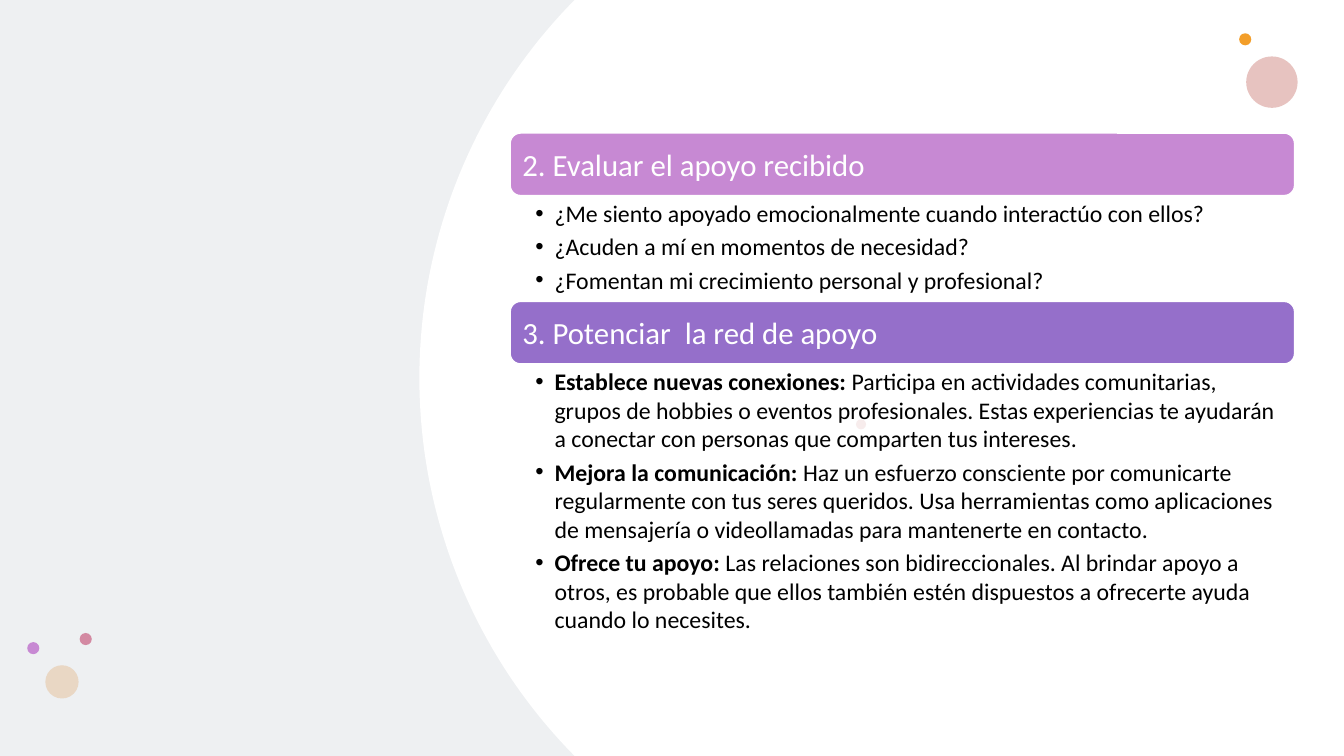
from math import asin, cos, sin

from lxml.etree import SubElement
from pptx import Presentation
from pptx.dml.color import RGBColor
from pptx.enum.shapes import MSO_SHAPE as Shape
from pptx.enum.text import MSO_ANCHOR as Anchor, MSO_AUTO_SIZE as AutoSize, PP_ALIGN as Align
from pptx.oxml.ns import qn
from pptx.util import Inches, Pt

WIDTH, HEIGHT = 13.33, 7.5
FONT = "Calibri"
CARD_LEFT, CARD_WIDTH, HEADING_HEIGHT = 5.06, 7.78, 0.62

# left, top, diameter, colour, opacity in percent
DOTS = [
    (12.36, 0.56, 0.51, "DFADA9", 72),
    (12.29, 0.33, 0.12, "F39E29", 100),
    (8.49, 4.16, 0.1, "E3BEBE", 28),
    (0.79, 6.28, 0.12, "D389A2", 100),
    (0.45, 6.6, 0.33, "E9D7C4", 100),
    (0.27, 6.37, 0.12, "C789D3", 100),
]

# top, list height, colour, heading, items as (bold lead, text)
SECTIONS = [
    (1.32, 1.05, "C789D3", "2. Evaluar el apoyo recibido", [
        ("", "¿Me siento apoyado emocionalmente cuando interactúo con ellos?"),
        ("", "¿Acuden a mí en momentos de necesidad?"),
        ("", "¿Fomentan mi crecimiento personal y profesional?"),
    ]),
    (2.99, 2.79, "956FCA", "3. Potenciar  la red de apoyo", [
        ("Establece nuevas conexiones:",
         " Participa en actividades comunitarias, grupos de hobbies o eventos "
         "profesionales. Estas experiencias te ayudarán a conectar con personas "
         "que comparten tus intereses."),
        ("Mejora la comunicación:",
         " Haz un esfuerzo consciente por comunicarte regularmente con tus seres "
         "queridos. Usa herramientas como aplicaciones de mensajería o "
         "videollamadas para mantenerte en contacto."),
        ("Ofrece tu apoyo:",
         " Las relaciones son bidireccionales. Al brindar apoyo a otros, es "
         "probable que ellos también estén dispuestos a ofrecerte ayuda cuando "
         "lo necesites."),
    ]),
]


def color(value):
    return RGBColor.from_string(value)


def paint(shape, fill, opacity=100):
    shape.shadow.inherit = False
    shape.fill.solid()
    shape.fill.fore_color.rgb = color(fill)
    shape.line.fill.background()
    if opacity < 100:
        tint = shape.fill._xPr.find(qn("a:solidFill"))[0]
        SubElement(tint, qn("a:alpha")).set("val", str(opacity * 1000))


def set_margins(frame, left, top, right, bottom):
    frame.margin_left, frame.margin_top = Inches(left), Inches(top)
    frame.margin_right, frame.margin_bottom = Inches(right), Inches(bottom)


def style_span(span, size, text_color, bold=False):
    span.font.name = FONT
    span.font.size = Pt(size)
    span.font.bold = bold
    span.font.color.rgb = color(text_color)


def add_white_panel(page, left_edge=4.16, corner=5.7, steps=80):
    """White area whose left side is a circular arc through both corners."""
    half, sagitta = HEIGHT / 2, corner - left_edge
    radius = (half ** 2 + sagitta ** 2) / (2 * sagitta)
    reach = asin(half / radius)
    angles = [reach * (1 - 2 * step / steps) for step in range(steps + 1)]
    arc = [(Inches(left_edge + radius * (1 - cos(angle))),
            Inches(half + radius * sin(angle))) for angle in angles]
    builder = page.shapes.build_freeform(Inches(WIDTH), Inches(0))
    builder.add_line_segments([(Inches(WIDTH), Inches(HEIGHT)), *arc])
    paint(builder.convert_to_shape(), "FFFFFF")


def add_dot(page, left, top, diameter, fill, opacity):
    dot = page.shapes.add_shape(Shape.OVAL, Inches(left), Inches(top),
                                Inches(diameter), Inches(diameter))
    paint(dot, fill, opacity)


def add_heading(page, top, fill, text):
    box = page.shapes.add_shape(Shape.ROUNDED_RECTANGLE, Inches(CARD_LEFT), Inches(top),
                                Inches(CARD_WIDTH), Inches(HEADING_HEIGHT))
    paint(box, fill)
    box.line.color.rgb = color("FFFFFF")
    box.line.width = Pt(1)
    frame = box.text_frame
    frame.word_wrap = True
    frame.vertical_anchor = Anchor.MIDDLE
    set_margins(frame, 0.09, 0.09, 0.09, 0.09)
    frame.text = text
    para = frame.paragraphs[0]
    para.alignment = Align.LEFT
    style_span(para.runs[0], 22, "FFFFFF")


def fill_list(box, top, height, items):
    box.left, box.top = Inches(CARD_LEFT), Inches(top)
    box.width, box.height = Inches(CARD_WIDTH), Inches(height)
    box.element.getparent().append(box.element)  # bring to front
    frame = box.text_frame
    frame.word_wrap = True
    frame.auto_size = AutoSize.NONE
    frame.vertical_anchor = Anchor.TOP
    set_margins(frame, 0.25, 0.03, 0.17, 0.03)
    for index, (lead, text) in enumerate(items):
        para = frame.add_paragraph() if index else frame.paragraphs[0]
        para.alignment = Align.LEFT
        para.line_spacing = 1.0
        para.space_before, para.space_after = Pt(0), Pt(3.4)
        properties = para._p.get_or_add_pPr()
        properties.set("marL", str(Inches(0.19)))
        properties.set("indent", str(-Inches(0.19)))
        for words, bold in ((lead, True), (text, False)):
            if words:
                span = para.add_run()
                span.text = words
                style_span(span, 17, "000000", bold)


def main():
    deck = Presentation()
    deck.slide_width, deck.slide_height = Inches(WIDTH), Inches(HEIGHT)
    page = deck.slides.add_slide(deck.slide_layouts.get_by_name("Two Content"))
    title = page.shapes.title.element
    title.getparent().remove(title)
    page.background.fill.solid()
    page.background.fill.fore_color.rgb = color("EEF0F2")

    add_white_panel(page)
    for dot in DOTS:
        add_dot(page, *dot)
    bodies = list(page.placeholders)
    for body, (top, height, fill, heading, items) in zip(bodies, SECTIONS):
        add_heading(page, top, fill, heading)
        fill_list(body, top + HEADING_HEIGHT, height, items)
    deck.save("out.pptx")


if __name__ == "__main__":
    main()
